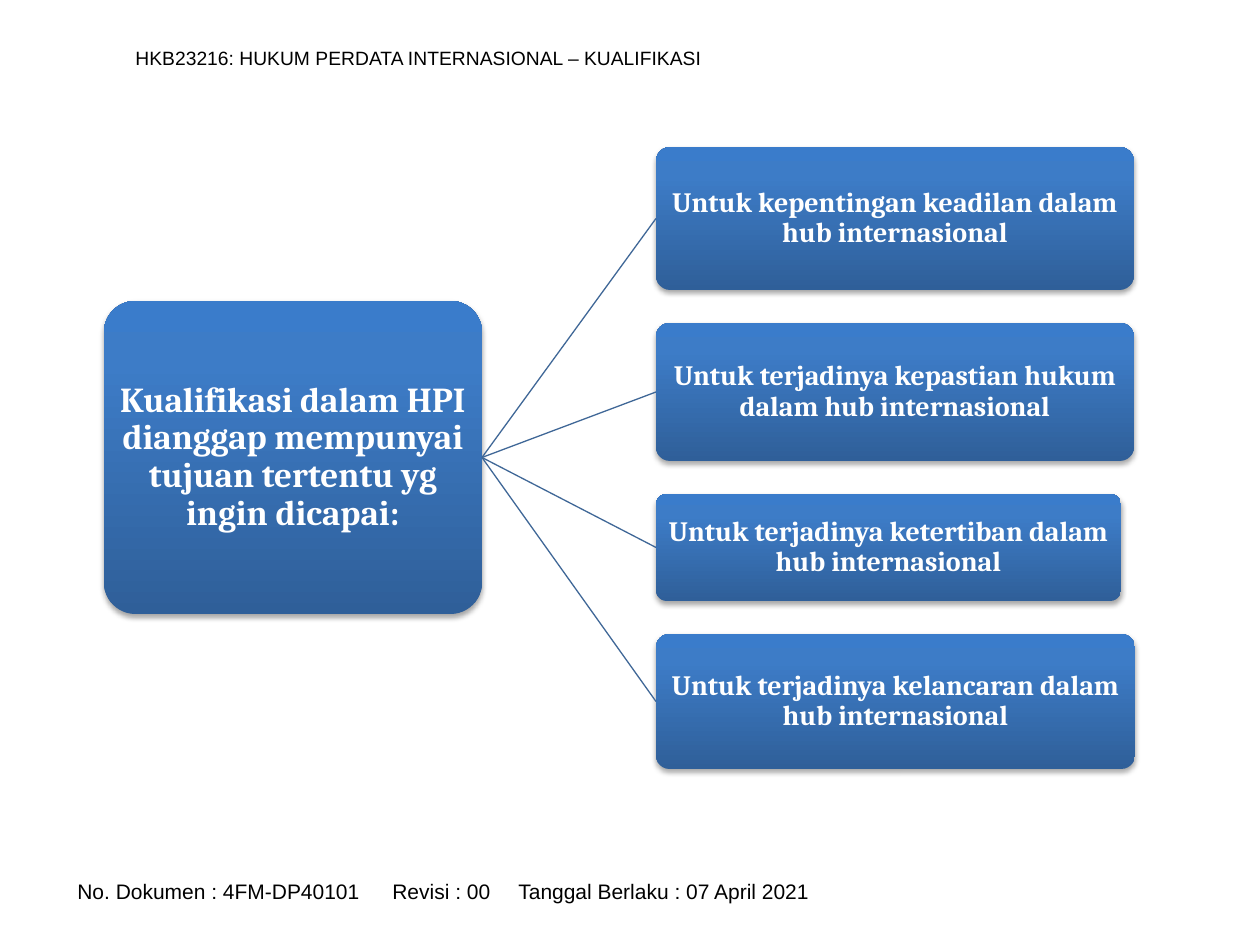
"""Build the slide on the four aims of qualification in private international law."""
from dataclasses import dataclass

from lxml.etree import SubElement
from pptx import Presentation
from pptx.dml.color import RGBColor
from pptx.enum.shapes import MSO_CONNECTOR as Connector, MSO_SHAPE as Shape
from pptx.enum.text import MSO_ANCHOR as Anchor, PP_ALIGN as Align
from pptx.oxml import parse_xml
from pptx.oxml.ns import nsdecls, qn
from pptx.util import Emu, Pt

PX = 914400 / 126
BLACK = RGBColor(0x00, 0x00, 0x00)
WHITE = RGBColor(0xFF, 0xFF, 0xFF)
LINK_BLUE = RGBColor(0x3F, 0x67, 0x97)
GRADIENT = (
    (0, RGBColor(0x2F, 0x5F, 0x99)),
    (80, RGBColor(0x3D, 0x7C, 0xC7)),
    (100, RGBColor(0x3A, 0x7C, 0xCB)),
)
BRANCH_LEFT, BRANCH_TOP, BRANCH_GAP = 656, 147, 33


@dataclass(frozen=True)
class Node:
    text: str
    width: int
    height: int
    size: int = 16


@dataclass(frozen=True)
class PageLine:
    columns: tuple[str, ...]
    left: int
    top: int
    width: int
    height: int
    size: int
    indent: int = 0
    tabs: tuple[int, ...] = ()


AIM = Node("Kualifikasi dalam HPI dianggap mempunyai tujuan tertentu yg ingin dicapai:", 378, 313, 20)
BRANCHES = (
    Node("Untuk kepentingan keadilan dalam hub internasional", 478, 143),
    Node("Untuk terjadinya kepastian hukum dalam hub internasional", 478, 138),
    Node("Untuk terjadinya ketertiban dalam hub internasional", 465, 107),
    Node("Untuk terjadinya kelancaran dalam hub internasional", 479, 135),
)
HEADER = PageLine(("HKB23216: HUKUM PERDATA INTERNASIONAL – KUALIFIKASI",), 123, 39, 1052, 37, 11)
FOOTER = PageLine(
    ("No. Dokumen : 4FM-DP40101", "Revisi : 00", "Tanggal Berlaku : 07 April 2021"),
    25, 872, 1191, 38, 12, indent=40, tabs=(497, 811),
)


def px(length: int) -> Emu:
    return Emu(round(length * PX))


def add_run(paragraph, text: str, size: int, font: str, color: RGBColor, bold: bool = False) -> None:
    run = paragraph.add_run()
    run.text = text
    run.font.size = Pt(size)
    run.font.name = font
    run.font.bold = bold
    run.font.color.rgb = color


def add_page_line(slide, line: PageLine) -> None:
    frame = slide.shapes.add_textbox(px(line.left), px(line.top), px(line.width), px(line.height)).text_frame
    frame.word_wrap = True
    frame.vertical_anchor = Anchor.MIDDLE
    paragraph = frame.paragraphs[0]
    paragraph.alignment = Align.JUSTIFY
    properties = paragraph._p.get_or_add_pPr()
    properties.set("marL", str(px(line.indent)))
    properties.set("indent", "0")
    if line.tabs:
        stops = SubElement(properties, qn("a:tabLst"))
        for position in line.tabs:
            SubElement(stops, qn("a:tab"), pos=str(px(position)), algn="l")
    for index, column in enumerate(line.columns):
        add_run(paragraph, "\t" * (index > 0) + column, line.size, "Arial", BLACK)


def add_node(slide, node: Node, left: int, top: int):
    box = slide.shapes.add_shape(Shape.ROUNDED_RECTANGLE, px(left), px(top), px(node.width), px(node.height))
    box.adjustments[0] = 0.1
    box.line.fill.background()
    box.shadow.inherit = False
    properties = box._element.spPr
    stops = "".join(
        f'<a:gs pos="{percent * 1000}"><a:srgbClr val="{color}"/></a:gs>' for percent, color in GRADIENT
    )
    properties.find(qn("a:ln")).addprevious(parse_xml(
        f'<a:gradFill {nsdecls("a")} rotWithShape="1"><a:gsLst>{stops}</a:gsLst>'
        '<a:lin ang="16200000" scaled="0"/></a:gradFill>'
    ))
    properties.find(qn("a:effectLst")).append(parse_xml(
        f'<a:outerShdw {nsdecls("a")} blurRad="{Pt(3.1)}" dist="{Pt(1.8)}" dir="5400000" rotWithShape="0">'
        '<a:srgbClr val="000000"><a:alpha val="35000"/></a:srgbClr></a:outerShdw>'
    ))
    frame = box.text_frame
    frame.word_wrap = True
    frame.vertical_anchor = Anchor.MIDDLE
    frame.margin_left = frame.margin_right = frame.margin_top = frame.margin_bottom = px(1)
    paragraph = frame.paragraphs[0]
    paragraph.alignment = Align.CENTER
    paragraph.line_spacing = 0.9
    add_run(paragraph, node.text, node.size, "Cambria", WHITE, bold=True)
    return box


def add_link(slide, aim, branch) -> None:
    link = slide.shapes.add_connector(Connector.STRAIGHT, 0, 0, 0, 0)
    link.begin_connect(aim, 3)
    link.end_connect(branch, 1)
    link.line.color.rgb = LINK_BLUE
    link.line.width = Pt(0.75)
    SubElement(link._element.spPr, qn("a:effectLst"))


def main() -> None:
    deck = Presentation()
    deck.slide_width, deck.slide_height = px(1260), px(945)
    slide = deck.slides.add_slide(deck.slide_layouts[6])
    add_page_line(slide, HEADER)
    add_page_line(slide, FOOTER)
    aim = add_node(slide, AIM, 104, 301)
    top = BRANCH_TOP
    for node in BRANCHES:
        add_link(slide, aim, add_node(slide, node, BRANCH_LEFT, top))
        top += node.height + BRANCH_GAP
    deck.save("out.pptx")


if __name__ == "__main__":
    main()
